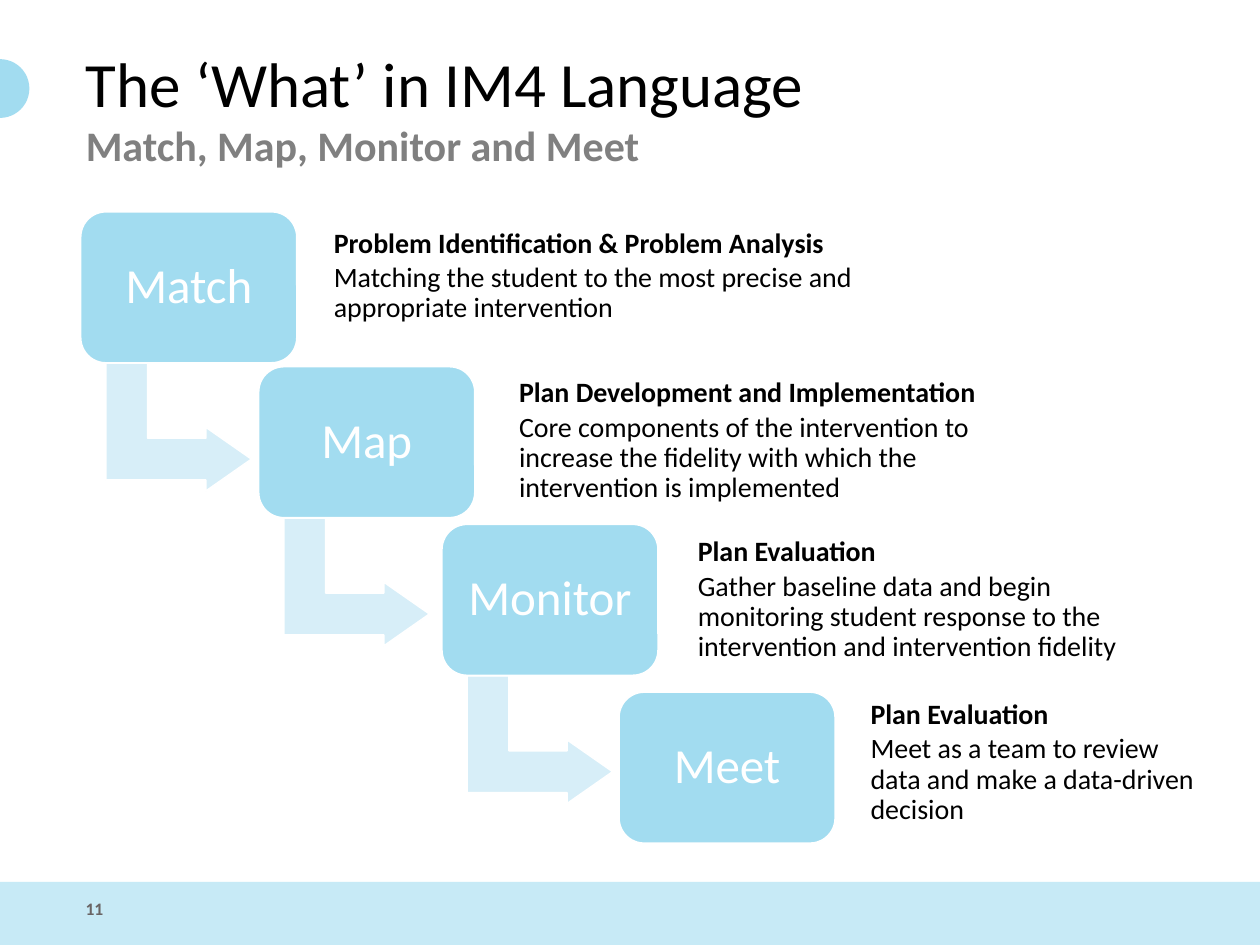
from pptx import Presentation
from pptx.dml.color import RGBColor
from pptx.enum import shapes, text
from pptx.util import Pt

HUES = {"band": "C7EAF6", "box": "A2DCF0", "arrow": "D7EEF8", "white": "FFFFFF",
        "black": "000000", "gray": "808080", "num": "696464"}
KIND = shapes.MSO_SHAPE


def draw(kind, x, y, w, h, fill, edge=None):
    item = slide.shapes.add_shape(kind, Pt(x), Pt(y), Pt(w), Pt(h))
    item.shadow.inherit = False
    item.fill.solid()
    item.fill.fore_color.rgb = RGBColor.from_string(HUES[fill])
    if edge:
        item.line.color.rgb = RGBColor.from_string(HUES[edge])
        item.line.width = Pt(1)
    else:
        item.line.fill.background()
    return item


def write(par, words, size, hue, bold=False):
    run = par.add_run()
    run.text = words
    run.font.name = "Calibri"
    run.font.size = Pt(size)
    run.font.bold = bold
    run.font.color.rgb = RGBColor.from_string(HUES[hue])


deck = Presentation()
deck.slide_width, deck.slide_height = Pt(720), Pt(540)
slide = deck.slides.add_slide(deck.slide_layouts[5])

# Background band and dot
draw(KIND.RECTANGLE, 0, 504, 720, 36, "band")
draw(KIND.OVAL, -16.8, 33.8, 33.6, 33.6, "box")

# Title
title = slide.shapes.title
title.left, title.top, title.width, title.height = Pt(41.8), Pt(21.6), Pt(666), Pt(80)
frame = title.text_frame
frame.auto_size = text.MSO_AUTO_SIZE.NONE
frame.vertical_anchor = text.MSO_ANCHOR.TOP
lines = [("The ‘What’ in IM4 Language", 36, "black", False),
         ("Match, Map, Monitor and Meet", 24, "gray", True)]
for i, line in enumerate(lines):
    par = frame.add_paragraph() if i else frame.paragraphs[0]
    par.alignment = text.PP_ALIGN.LEFT
    par.space_before = Pt(0)
    write(par, *line)

# Steps: name, box corner, note frame, note heading, note body
steps = [
    ("Match", (46.1, 121), (185.8, 118.1, 372.2, 79.9),
     "Problem Identification & Problem Analysis",
     "Matching the student to the most precise and appropriate intervention"),
    ("Map", (147.8, 209.5), (291.6, 214.6, 280.1, 74.9),
     "Plan Development and Implementation",
     "Core components of the intervention to increase the fidelity with which "
     "the intervention is implemented"),
    ("Monitor", (252.5, 299.6), (393.8, 303.1, 277.9, 79.9),
     "Plan Evaluation",
     "Gather baseline data and begin monitoring student response to the "
     "intervention and intervention fidelity"),
    ("Meet", (353.7, 395.5), (492.5, 396, 197.3, 79.9),
     "Plan Evaluation",
     "Meet as a team to review data and make a data-driven decision"),
]
for name, (x, y), area, head, body in steps:
    # Arrow to the next step
    if name != steps[-1][0]:
        arrow = draw(KIND.BENT_UP_ARROW, x + 19.4, y + 81.4, 73.2, 83.4, "arrow", "white")
        arrow.rotation = 90
        for i, part in enumerate((0.328, 0.25, 0.358)):
            arrow.adjustments[i] = part

    # Step box
    box = draw(KIND.ROUNDED_RECTANGLE, x, y, 123.6, 86.4, "box", "white")
    box.adjustments[0] = 0.167
    frame = box.text_frame
    frame.margin_left = frame.margin_right = Pt(7)
    frame.vertical_anchor = text.MSO_ANCHOR.MIDDLE
    par = frame.paragraphs[0]
    par.alignment = text.PP_ALIGN.CENTER
    par.line_spacing = 0.9
    write(par, name, 28, "white")

    # Note beside the box
    note = slide.shapes.add_textbox(*map(Pt, area))
    frame = note.text_frame
    frame.word_wrap = True
    frame.vertical_anchor = text.MSO_ANCHOR.MIDDLE
    frame.margin_left = frame.margin_right = Pt(5)
    frame.margin_top = frame.margin_bottom = Pt(5)
    for i, words in enumerate((head, body)):
        par = frame.add_paragraph() if i else frame.paragraphs[0]
        par.line_spacing = 0.9
        par.space_after = Pt(2.4)
        write(par, words, 16, "black", bold=i == 0)

# Slide number
num = slide.shapes.add_textbox(Pt(41.8), Pt(509.8), Pt(44.6), Pt(18))
num.text_frame.word_wrap = True
write(num.text_frame.paragraphs[0], "11", 10, "num", True)

deck.save("out.pptx")
